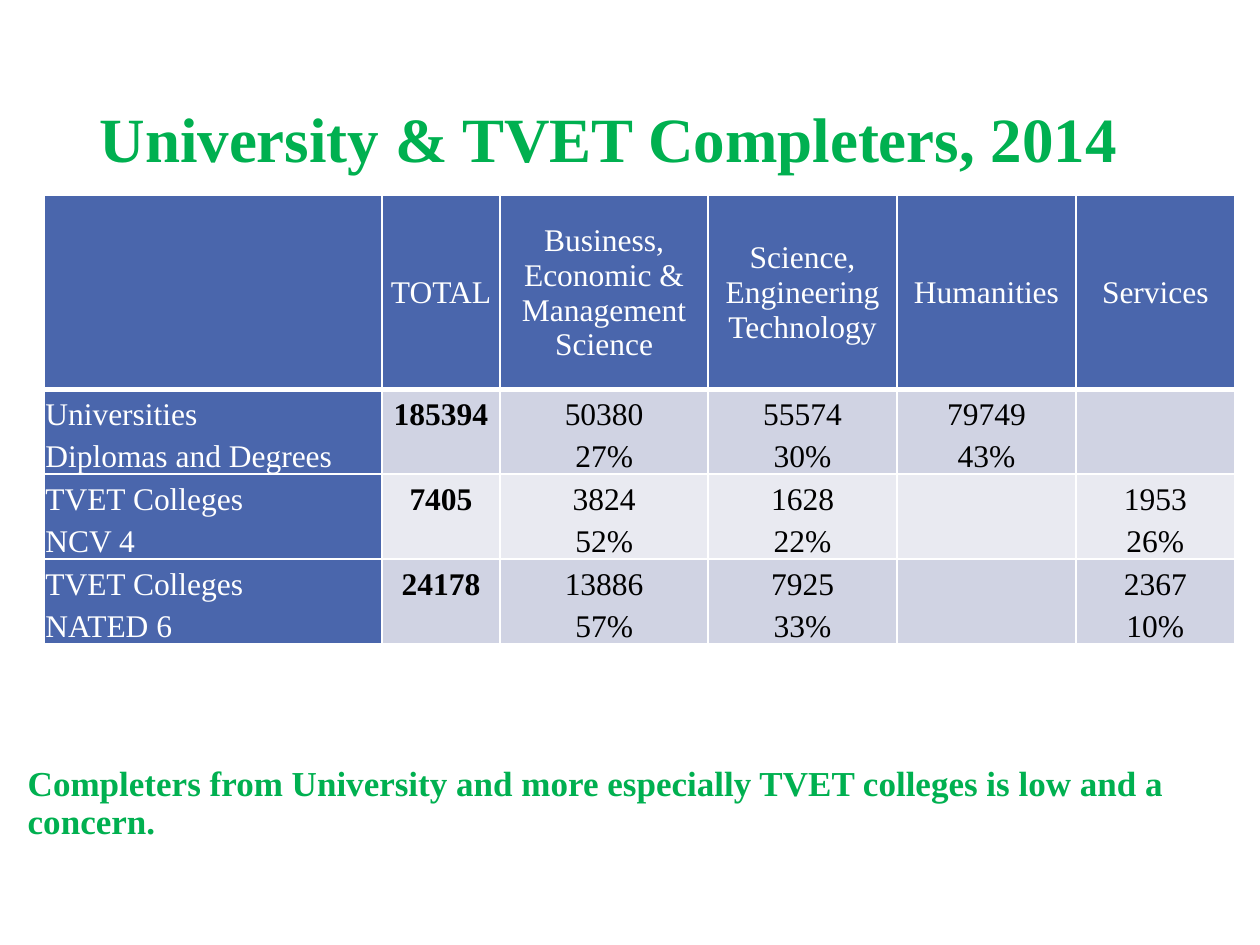
from pptx import Presentation
from pptx.dml.color import RGBColor
from pptx.enum.text import MSO_ANCHOR, PP_ALIGN
from pptx.oxml.ns import qn
from pptx.util import Inches, Pt
from lxml import etree

LEFT, CENTER = PP_ALIGN.LEFT, PP_ALIGN.CENTER
TOP, MIDDLE = MSO_ANCHOR.TOP, MSO_ANCHOR.MIDDLE

# Content
TITLE = "University & TVET Completers, 2014"
NOTE = "Completers from University and more especially TVET colleges is low and a concern."
HEAD = ["", "TOTAL", "Business, Economic & Management Science",
        "Science, Engineering Technology", "Humanities", "Services"]
ROWS = [
    [("Universities", "Diplomas and Degrees"), ("185394",), ("50380", "27%"),
     ("55574", "30%"), ("79749", "43%"), ()],
    [("TVET Colleges", "NCV 4"), ("7405",), ("3824", "52%"),
     ("1628", "22%"), (), ("1953", "26%")],
    [("TVET Colleges", "NATED 6"), ("24178",), ("13886", "57%"),
     ("7925", "33%"), (), ("2367", "10%")],
]

# Theme and grid
THEME = dict(font="Times New Roman", green="00B050", blue="4A66AC",
             bands=("D0D3E3", "E9EAF1"), white="FFFFFF", black="000000",
             title=36, note=20, cell=18)
WIDE, HIGH = 10, 7.5
COLS = [2.68, 0.94, 1.65, 1.5, 1.42, 1.26]
TALL = [1.54] + [0.66] * len(ROWS)


def place(item, *box):
    item.left, item.top, item.width, item.height = map(Inches, box)


def write(para, lines, size, color, bold=False):
    for n, line in enumerate(lines):
        if n:
            para.add_line_break()
        run = para.add_run()
        run.text = line
        font = run.font
        font.name, font.size, font.bold = THEME["font"], Pt(size), bold
        font.color.rgb = RGBColor.from_string(color)


def edge(cell, base):
    props = cell._tc.get_or_add_tcPr()
    sides = [("L", 1), ("R", 1), ("T", 1), ("B", base)]
    for n, (side, width) in enumerate(sides):
        line = etree.Element(qn(f"a:ln{side}"), w=str(Pt(width)))
        fill = etree.SubElement(line, qn("a:solidFill"))
        etree.SubElement(fill, qn("a:srgbClr"), val=THEME["white"])
        props.insert(n, line)


def paint(cell, lines, row, col):
    head, side = row == 0, col == 0
    dark = head or side
    fill = THEME["blue"] if dark else THEME["bands"][(row - 1) % 2]
    cell.fill.solid()
    cell.fill.fore_color.rgb = RGBColor.from_string(fill)
    edge(cell, 3 if head else 1)
    cell.margin_left = cell.margin_right = cell.margin_top = Inches(0.01)
    cell.margin_bottom = 0
    cell.vertical_anchor = MIDDLE if dark else TOP
    para = cell.text_frame.paragraphs[0]
    para.alignment = LEFT if side else CENTER
    para.line_spacing = 1.0 if head else 1.2
    write(para, lines, THEME["cell"], THEME["white" if dark else "black"],
          bold=col == 1 and not head)


deck = Presentation()
deck.slide_width, deck.slide_height = Inches(WIDE), Inches(HIGH)
slide = deck.slides.add_slide(deck.slide_layouts[1])

# Title and closing note
title, note = slide.placeholders
place(title, 0.69, 0.4, 8.62, 1.45)
place(note, 0.12, 6.03, 9.88, 0.79)
for item, text, size, hold in ((title, TITLE, THEME["title"], MIDDLE),
                               (note, NOTE, THEME["note"], TOP)):
    frame = item.text_frame
    frame.word_wrap, frame.vertical_anchor = True, hold
    para = frame.paragraphs[0]
    para.alignment, para.line_spacing = LEFT, 0.9
    write(para, [text], size, THEME["green"], bold=True)

# The note is a body paragraph without bullet or indent
para.space_before = Pt(10)
props = para._p.get_or_add_pPr()
props.set("marL", "0")
props.set("indent", "0")
etree.SubElement(props, qn("a:buNone"))

# Table of completers
grid = [[(name,) if name else () for name in HEAD]] + ROWS
table = slide.shapes.add_table(len(grid), len(COLS), Inches(0.35), Inches(1.55),
                               Inches(sum(COLS)), Inches(sum(TALL))).table
for col, width in zip(table.columns, COLS):
    col.width = Inches(width)
for row, height in zip(table.rows, TALL):
    row.height = Inches(height)
for r, line in enumerate(grid):
    for c, lines in enumerate(line):
        paint(table.cell(r, c), lines, r, c)

deck.save("out.pptx")
